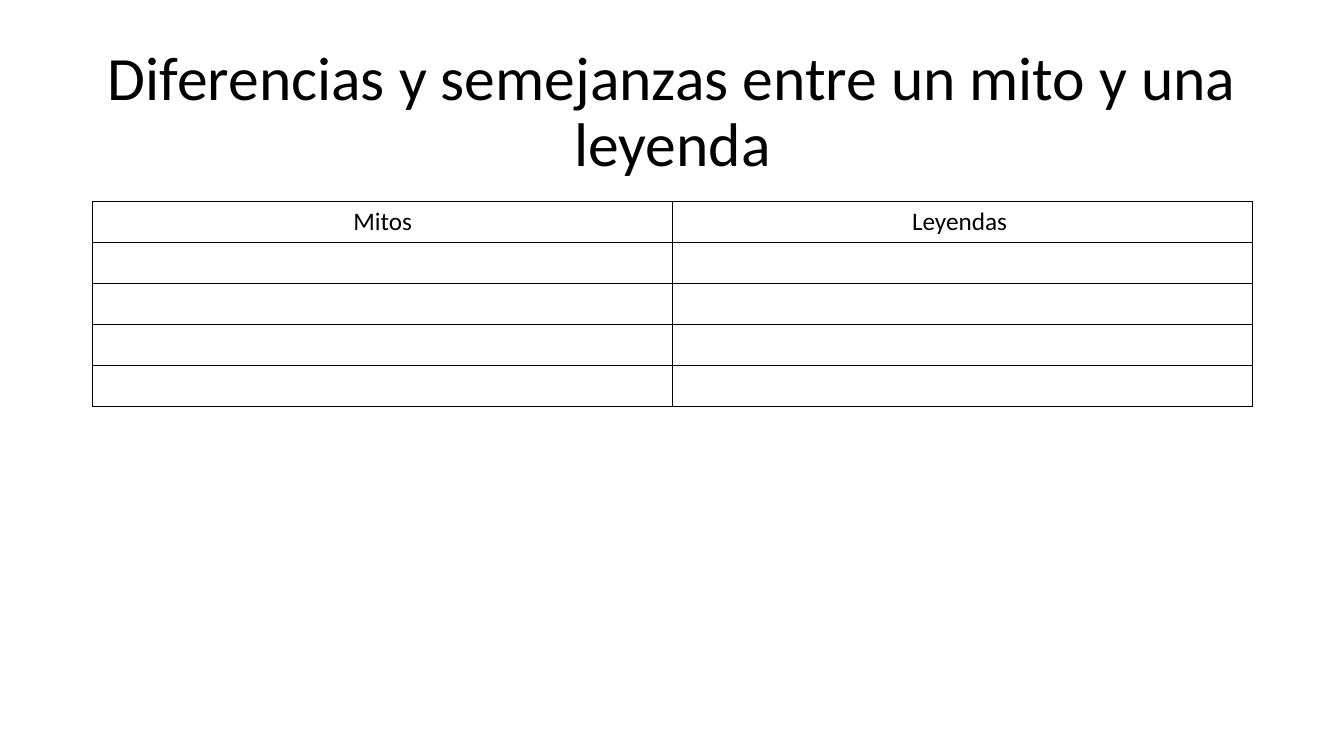
"""Build a slide with a blank table that compares myths and legends."""
from lxml.etree import SubElement
from pptx import Presentation
from pptx.dml.color import RGBColor
from pptx.enum.text import MSO_ANCHOR, PP_ALIGN
from pptx.oxml.ns import qn
from pptx.util import Inches, Pt

COLORS = {"ink": "000000", "paper": "FFFFFF"}
FONT = "Calibri"
WIDE, HIGH = 13.33, 7.5
LEFT, SPAN = 0.92, 11.5
ROW = 0.406
HEADS = ["Mitos", "Leyendas "]
BLANKS = 4


def color(name):
    """Return the named colour."""
    return RGBColor.from_string(COLORS[name])


def place(shape, left, top, width, height):
    """Set a shape's box in inches."""
    shape.left, shape.top = Inches(left), Inches(top)
    shape.width, shape.height = Inches(width), Inches(height)


def write(frame, text, size):
    """Put one centred paragraph in a text frame."""
    frame.text = text
    para = frame.paragraphs[0]
    para.alignment = PP_ALIGN.CENTER
    for run in para.runs:
        run.font.name, run.font.size = FONT, Pt(size)
        run.font.color.rgb = color("ink")
    return para


def border(cell):
    """Draw a thin line on each side of a cell."""
    props = cell._tc.get_or_add_tcPr()
    for spot, side in enumerate("LRTB"):
        line = SubElement(props, qn(f"a:ln{side}"), w=str(Pt(1)))
        fill = SubElement(line, qn("a:solidFill"))
        SubElement(fill, qn("a:srgbClr"), val=COLORS["ink"])
        props.insert(spot, line)


def add_title(slide, text):
    """Fill and place the title."""
    title = slide.shapes.title
    place(title, LEFT, 0.4, SPAN, 1.45)
    title.text_frame.word_wrap = True
    title.text_frame.vertical_anchor = MSO_ANCHOR.MIDDLE
    write(title.text_frame, text, 44).line_spacing = 0.9


def add_grid(slide, heads, blanks):
    """Add a ruled table with a head row and blank rows."""
    count = blanks + 1
    table = slide.shapes.add_table(
        count, len(heads), Inches(LEFT), Inches(2),
        Inches(SPAN), Inches(ROW * count)).table
    table.first_row = table.horz_banding = False
    for cell in table.iter_cells():
        cell.fill.solid()
        cell.fill.fore_color.rgb = color("paper")
        border(cell)
    for col, head in enumerate(heads):
        write(table.cell(0, col).text_frame, head, 18)


def main():
    """Build and save the slide."""
    deck = Presentation()
    deck.slide_width, deck.slide_height = Inches(WIDE), Inches(HIGH)
    slide = deck.slides.add_slide(deck.slide_layouts[5])
    add_title(slide, "Diferencias y semejanzas entre un mito y una leyenda")
    add_grid(slide, HEADS, BLANKS)
    deck.save("out.pptx")


if __name__ == "__main__":
    main()
